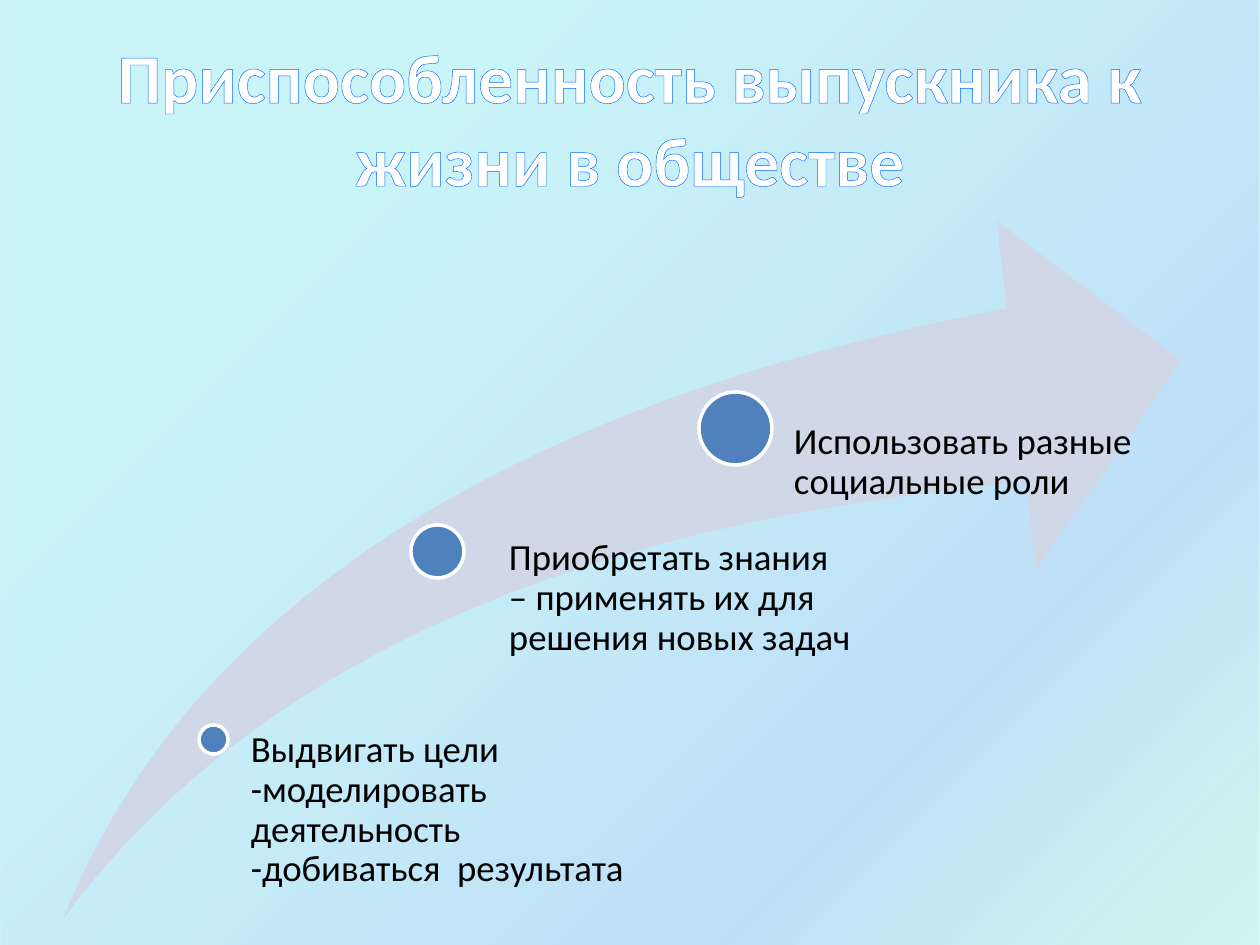
"""Builds the slide on how a graduate adapts to life in society."""
from pptx import Presentation
from pptx.dml.color import RGBColor
from pptx.enum.shapes import MSO_SHAPE
from pptx.enum.text import MSO_ANCHOR, MSO_AUTO_SIZE, PP_ALIGN
from pptx.oxml import parse_xml
from pptx.oxml.ns import nsdecls
from pptx.util import Pt

RECT, SWOOSH, OVAL = MSO_SHAPE.RECTANGLE, MSO_SHAPE.SWOOSH_ARROW, MSO_SHAPE.OVAL
TOP, MIDDLE, NO_FIT = MSO_ANCHOR.TOP, MSO_ANCHOR.MIDDLE, MSO_AUTO_SIZE.NONE
LEFT, CENTER = PP_ALIGN.LEFT, PP_ALIGN.CENTER
PX = 914400 // 126

TITLE = "Приспособленность выпускника к жизни в обществе"
TITLE_BOX = (63, 38, 1134, 158)
TITLE_FONT = {"name": "Calibri", "size": Pt(39.6), "bold": True}
STEP_FONT = {"name": "Calibri", "size": Pt(21), "bold": False}
BACKDROP_BOX = (0, 0, 1260, 966)
BACKDROP_STOPS = [(25, "21D6E0", 23), (75, "0087E6", 25), (100, "03D4A8", 18), (100, "005CBF", 26)]
ARROW_BOX = (63, 221, 1118, 698)
STEPS = [
    {"text": "Выдвигать цели -моделировать деятельность -добиваться  результата",
     "dot": (199, 725, 29), "box": (236, 731, 394, 169), "inset": 15},
    {"text": "Приобретать знания – применять их для решения новых задач",
     "dot": (411, 525, 53), "box": (481, 539, 374, 381), "inset": 28},
    {"text": "Использовать разные социальные роли",
     "dot": (699, 392, 73), "box": (755, 423, 471, 485), "inset": 39},
]


def rgb(value):
    return RGBColor.from_string(value)


def emu(box):
    return [v * PX for v in box]


def set_all(obj, values):
    for name, value in values.items():
        setattr(obj, name, value)


def add_shape(s, kind, box, fill=None, line=None):
    sp = s.shapes.add_shape(kind, *emu(box))
    sp.shadow.inherit = False
    if fill:
        sp.fill.solid()
        sp.fill.fore_color.rgb = rgb(fill)
    if line:
        sp.line.color.rgb = rgb(line)
        sp.line.width = Pt(2)
    else:
        sp.line.fill.background()
    return sp


def write(sp, text, font, color, frame, para):
    tf = sp.text_frame
    set_all(tf, {"word_wrap": True, "auto_size": NO_FIT, **frame})
    p = tf.paragraphs[0]
    set_all(p, para)
    r = p.add_run()
    r.text = text
    set_all(r.font, font)
    r.font.color.rgb = rgb(color)
    return r


def add_backdrop(s):
    sp = add_shape(s, RECT, BACKDROP_BOX)
    stops = "".join(
        f'<a:gs pos="{pos * 1000}"><a:srgbClr val="{color}"><a:alpha val="{alpha * 1000}"/></a:srgbClr></a:gs>'
        for pos, color, alpha in BACKDROP_STOPS)
    sp.element.spPr.insert(2, parse_xml(
        f'<a:gradFill {nsdecls("a")} rotWithShape="1"><a:gsLst>{stops}</a:gsLst>'
        '<a:lin ang="2700000" scaled="1"/></a:gradFill>'))
    s.shapes.title.element.addprevious(sp.element)


def add_title(s):
    sp = s.shapes.title
    set_all(sp, dict(zip(("left", "top", "width", "height"), emu(TITLE_BOX))))
    r = write(sp, TITLE, TITLE_FONT, "FFFFFF", {"vertical_anchor": MIDDLE}, {"alignment": CENTER})
    r.font.fill.solid()
    r.font.color.rgb = rgb("FFFFFF")
    r.font._element.insert(0, parse_xml(
        f'<a:ln {nsdecls("a")} w="{Pt(1.45)}"><a:solidFill><a:srgbClr val="0066FF"/></a:solidFill></a:ln>'))


def add_step(s, step):
    x, y, size = step["dot"]
    add_shape(s, OVAL, (x, y, size, size), "4F81BD", "FFFFFF")
    frame = {"vertical_anchor": TOP, "margin_left": step["inset"] * PX,
             "margin_top": 0, "margin_right": 0, "margin_bottom": 0}
    write(s.shapes.add_textbox(*emu(step["box"])), step["text"], STEP_FONT, "000000",
          frame, {"alignment": LEFT, "line_spacing": 0.9})


def main():
    prs = Presentation()
    prs.slide_width, prs.slide_height = emu((1260, 945))
    s = prs.slides.add_slide(prs.slide_layouts[5])
    add_backdrop(s)
    add_title(s)
    arrow = add_shape(s, SWOOSH, ARROW_BOX, "D0D8E8")
    arrow.adjustments[0] = arrow.adjustments[1] = 0.25
    for step in STEPS:
        add_step(s, step)
    prs.save("out.pptx")


if __name__ == "__main__":
    main()
